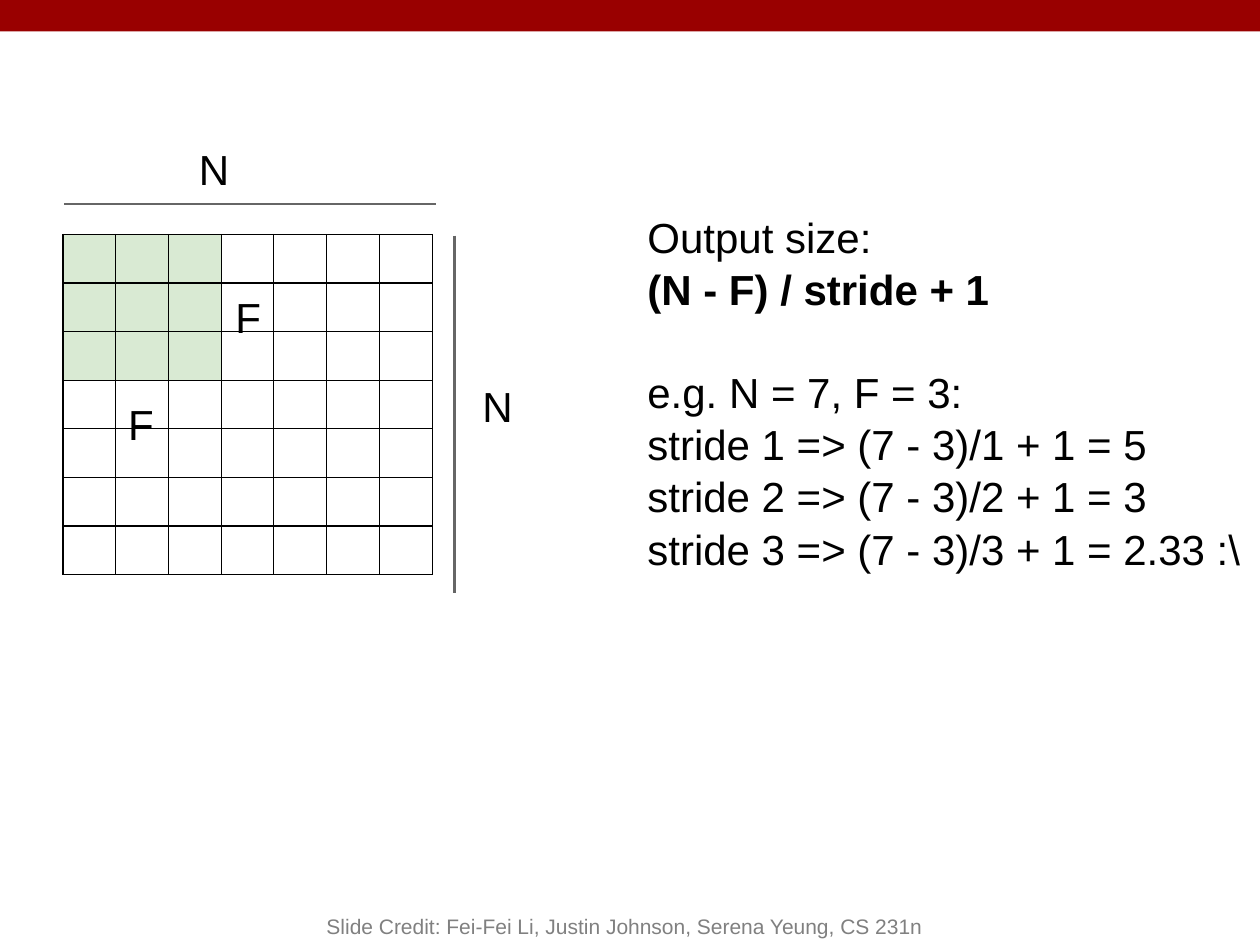
from lxml import etree
from pptx import Presentation
from pptx.dml.color import RGBColor
from pptx.enum.shapes import MSO_CONNECTOR, MSO_SHAPE
from pptx.enum.text import MSO_ANCHOR, PP_ALIGN
from pptx.oxml.ns import qn
from pptx.util import Pt

LINE = MSO_CONNECTOR.STRAIGHT
RECT = MSO_SHAPE.RECTANGLE
BOTTOM = MSO_ANCHOR.BOTTOM
CENTER = PP_ALIGN.CENTER

COLORS = {"bar": "990000", "filter": "D9EAD3", "cell": "FFFFFF",
          "rule": "666666", "text": "000000", "credit": "808080"}
FONT = "Arial"
N, F = 7, 3
CELL_W, CELL_H = 30.15, 27.8
GRID_X, GRID_Y = 36, 133.9
LABELS = [("N", 106.6, 74.9), ("N", 268.6, 210.2),
          ("F", 66.2, 220.3), ("F", 127.4, 159.1)]
FORMULA = ["Output size:", "(N - F) / stride + 1", "e.g. N = 7, F = 3:",
           "stride 1 => (7 - 3)/1 + 1 = 5",
           "stride 2 => (7 - 3)/2 + 1 = 3",
           "stride 3 => (7 - 3)/3 + 1 = 2.33 :\\"]


def rgb(name):
    return RGBColor.from_string(COLORS[name])


def add_bar(s):
    bar = s.shapes.add_shape(RECT, 0, 0, Pt(720), Pt(18))
    bar.shadow.inherit = False
    bar.fill.solid()
    bar.fill.fore_color.rgb = rgb("bar")
    bar.line.fill.background()


def add_text(s, lines, x, y, w, h, size=24, color="text", inset=7.2):
    tf = s.shapes.add_textbox(Pt(x), Pt(y), Pt(w), Pt(h)).text_frame
    tf.word_wrap = True
    tf.margin_left = tf.margin_right = Pt(7.2)
    tf.margin_top = tf.margin_bottom = Pt(inset)
    tf.text = "\n".join(lines)
    for p in tf.paragraphs:
        font = p.runs[0].font
        font.name, font.size = FONT, Pt(size)
        font.color.rgb = rgb(color)
    return tf


def add_rule(s, x1, y1, x2, y2):
    rule = s.shapes.add_connector(LINE, Pt(x1), Pt(y1), Pt(x2), Pt(y2))
    rule.line.color.rgb = rgb("rule")
    rule.line.width = Pt(1.5)
    etree.SubElement(rule._element.spPr, qn("a:effectLst"))


def add_borders(cell):
    tc_pr = cell._tc.get_or_add_tcPr()
    for side in ("lnL", "lnR", "lnT", "lnB"):
        ln = etree.SubElement(tc_pr, qn(f"a:{side}"), w=str(Pt(0.75)))
        fill = etree.SubElement(ln, qn("a:solidFill"))
        etree.SubElement(fill, qn("a:srgbClr"), val=COLORS["text"])


def add_grid(s):
    """N x N input with the F x F filter shaded in its top left corner."""
    table = s.shapes.add_table(N, N, Pt(GRID_X), Pt(GRID_Y),
                               Pt(N * CELL_W), Pt(N * CELL_H)).table
    table.first_row = table.horz_banding = False
    for i in range(N):
        table.columns[i].width = Pt(CELL_W)
        table.rows[i].height = Pt(CELL_H)
        for j in range(N):
            cell = table.cell(i, j)
            cell.margin_top = cell.margin_bottom = 0
            add_borders(cell)
            cell.fill.solid()
            cell.fill.fore_color.rgb = rgb("filter" if max(i, j) < F else "cell")


def add_formula(s):
    tf = add_text(s, FORMULA, 362.9, 112.3, 357.1, 190)
    for p in tf.paragraphs:
        p.line_spacing = 1.04
    tf.paragraphs[1].runs[0].font.bold = True
    tf.paragraphs[2].space_before = Pt(28.7)


def add_credit(s):
    credit = "Slide Credit: Fei-Fei Li, Justin Johnson, Serena Yeung, CS 231n"
    tf = add_text(s, [credit], 144, 504, 426, 36, 12, "credit", 3.6)
    tf.vertical_anchor = BOTTOM
    tf.paragraphs[0].alignment = CENTER


def main():
    prs = Presentation()
    prs.slide_width, prs.slide_height = Pt(720), Pt(540)
    s = prs.slides.add_slide(prs.slide_layouts[6])
    add_bar(s)
    add_grid(s)
    add_rule(s, 36.7, 116.6, 249, 116.6)
    add_rule(s, 259.9, 134.6, 259.9, 339)
    for text, x, y in LABELS:
        add_text(s, [text], x, y, 61.2, 31)
    add_formula(s)
    add_credit(s)
    prs.save("out.pptx")


if __name__ == "__main__":
    main()
